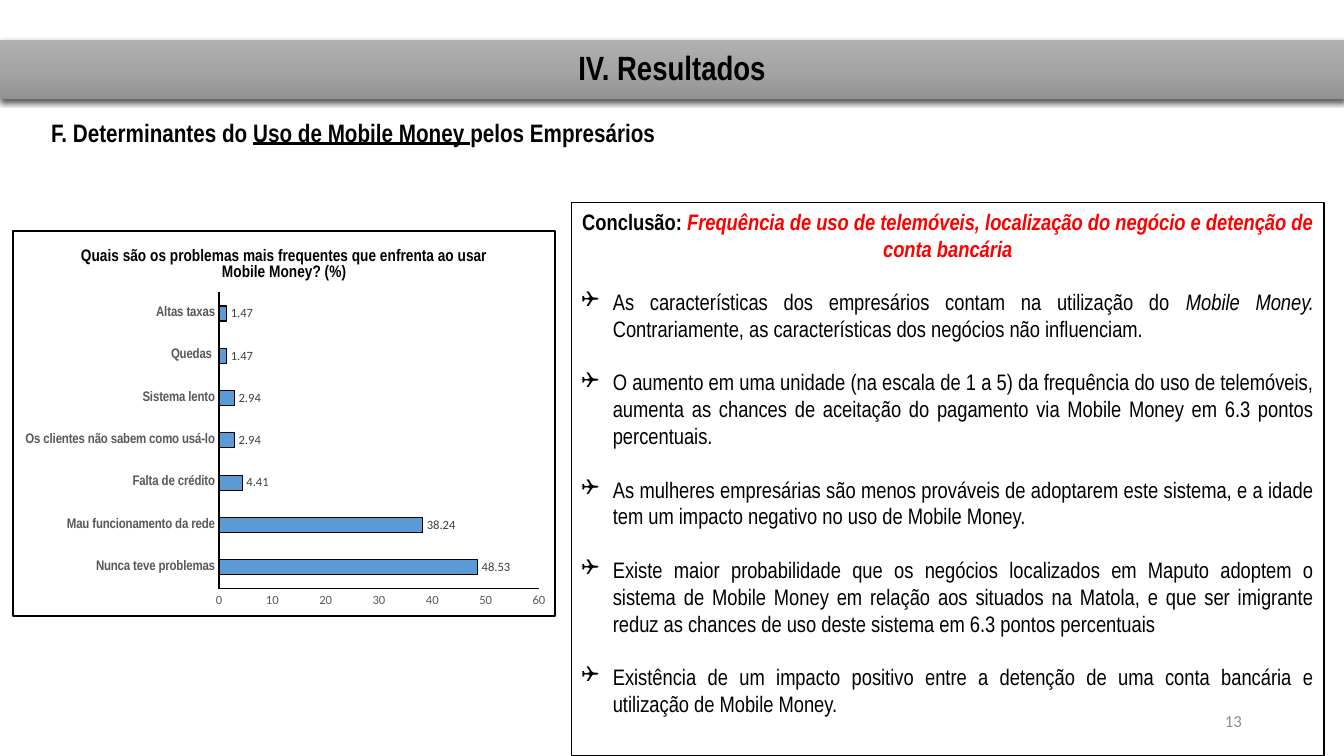
import copy

import pptx
import pptx.chart.data
import pptx.dml.color
import pptx.enum.chart
import pptx.enum.text
import pptx.oxml
import pptx.oxml.ns
import pptx.util
from pptx.util import Cm, Pt

RGB = pptx.dml.color.RGBColor
BLACK = RGB(0x00, 0x00, 0x00)
WHITE = RGB(0xFF, 0xFF, 0xFF)
RED = RGB(0xFF, 0x00, 0x00)
BLUE = RGB(0x5B, 0x9B, 0xD5)
LABEL_GREY = RGB(0x40, 0x40, 0x40)
AXIS_GREY = RGB(0x59, 0x59, 0x59)
NUMBER_GREY = RGB(0x8C, 0x8C, 0x8C)
BAND_GREYS = [RGB(0xAF, 0xAF, 0xAF), RGB(0xA5, 0xA5, 0xA5), RGB(0x93, 0x93, 0x93)]

NARROW = "Arial Narrow"
ALIGN = pptx.enum.text.PP_ALIGN
ANCHOR = pptx.enum.text.MSO_ANCHOR
BULLET_INDENT = Cm(0.79)

FINDINGS = [
    [("As características dos empresários contam na utilização do ", {}),
     ("Mobile Money. ", {"italic": True}),
     ("Contrariamente, as características dos negócios não influenciam.", {})],
    [("O aumento em uma unidade (na escala de 1 a 5) da frequência do uso de "
      "telemóveis, aumenta as chances de aceitação do pagamento via Mobile Money "
      "em 6.3 pontos percentuais.", {})],
    [("As mulheres empresárias são menos prováveis de adoptarem este sistema, e a "
      "idade tem um impacto negativo no uso de Mobile Money.", {})],
    [("Existe maior probabilidade que os negócios localizados em Maputo adoptem o "
      "sistema de Mobile Money em relação aos situados na Matola, e que ser "
      "imigrante reduz as chances de uso deste sistema em 6.3 pontos percentuais", {})],
    [("Existência de um impacto positivo entre a detenção de uma conta bancária e "
      "utilização de Mobile Money.", {})],
]
PROBLEMS = {
    "Nunca teve problemas": 48.53,
    "Mau funcionamento da rede": 38.24,
    "Falta de crédito": 4.41,
    "Os clientes não sabem como usá-lo": 2.94,
    "Sistema lento": 2.94,
    "Quedas ": 1.47,
    "Altas taxas": 1.47,
}


def xml(tag, inner, attrs=""):
    """Return an element of the a: or c: namespace."""
    ns = pptx.oxml.ns.nsdecls("a", "c")
    return pptx.oxml.parse_xml(f"<{tag} {ns} {attrs}>{inner}</{tag}>")


def format_font(font, size, color=BLACK, name=NARROW, bold=False, italic=False,
                underline=False):
    font.size, font.name = Pt(size), name
    font.bold, font.italic, font.underline = bold, italic, underline
    font.color.rgb = color


def add_text(p, text, **fmt):
    r = p.add_run()
    r.text = text
    format_font(r.font, **fmt)


def place(s, left, top, width, height):
    s.left, s.top, s.width, s.height = Cm(left), Cm(top), Cm(width), Cm(height)


def prepare_frame(s, align, anchor=ANCHOR.TOP):
    """Set up the text frame and return its first paragraph."""
    tf = s.text_frame
    tf.word_wrap = True
    tf.auto_size = pptx.enum.text.MSO_AUTO_SIZE.NONE
    tf.vertical_anchor = anchor
    p = tf.paragraphs[0]
    p.alignment = align
    p.space_before = Pt(0)
    return p


def set_bullet(p, char=None):
    pPr = p._p.get_or_add_pPr()
    indent = BULLET_INDENT if char else 0
    pPr.set("marL", str(indent))
    pPr.set("indent", str(-indent))
    if char:
        pPr.append(xml("a:buFont", "", 'typeface="Wingdings"'))
        pPr.append(xml("a:buChar", "", f'char="{char}"'))
    else:
        pPr.append(xml("a:buNone", ""))


def format_title(s):
    place(s, 0, 1.02, 33.87, 1.47)
    s.fill.gradient()
    s.fill.gradient_angle = 270
    stops = s.fill.gradient_stops
    first = stops[0]._gs
    first.addnext(copy.deepcopy(first))
    for stop, color, pos in zip(s.fill.gradient_stops, BAND_GREYS, (0, 0.5, 1)):
        stop.color.rgb = color
        stop.position = pos
    s._element.spPr.append(xml(
        "a:effectLst",
        f'<a:outerShdw blurRad="{Pt(4.5)}" dist="{Pt(1.5)}" dir="5400000" rotWithShape="0">'
        '<a:srgbClr val="000000"><a:alpha val="63000"/></a:srgbClr></a:outerShdw>'))
    p = prepare_frame(s, ALIGN.CENTER, ANCHOR.MIDDLE)
    p.line_spacing = 0.9
    add_text(p, "IV. Resultados", size=24, bold=True)


def format_conclusion(s):
    place(s, 14.4, 5.11, 18.97, 13.94)
    s.line.color.rgb = BLACK
    s.line.width = Pt(1)
    p = prepare_frame(s, ALIGN.CENTER)
    set_bullet(p)
    add_text(p, "Conclusão: ", size=16, bold=True)
    add_text(p, "Frequência de uso de telemóveis, localização do negócio e detenção "
             "de conta bancária", size=16, color=RED, bold=True, italic=True)
    for finding in FINDINGS:
        p = s.text_frame.add_paragraph()
        p.alignment = ALIGN.JUSTIFY
        p.space_before = Pt(19)
        set_bullet(p, "❑")
        for text, fmt in finding:
            add_text(p, text, size=16, **fmt)


def add_subtitle(slide):
    s = slide.shapes.add_textbox(Cm(1.04), Cm(2.82), Cm(30.5), Cm(1.02))
    p = prepare_frame(s, ALIGN.JUSTIFY)
    add_text(p, "F. Determinantes do ", size=18, bold=True)
    add_text(p, "Uso de Mobile Money ", size=18, bold=True, underline=True)
    add_text(p, "pelos Empresários", size=18, bold=True)


def add_page_number(slide):
    s = slide.shapes.add_textbox(Cm(23.93), Cm(17.65), Cm(7.62), Cm(1.02))
    p = prepare_frame(s, ALIGN.RIGHT, ANCHOR.MIDDLE)
    add_text(p, "13", size=12, color=NUMBER_GREY, name="Calibri")


def format_axis(axis, **fmt):
    axis.has_major_gridlines = False
    axis.major_tick_mark = axis.minor_tick_mark = pptx.enum.chart.XL_TICK_MARK.NONE
    axis.format.line.color.rgb = BLACK
    axis.format.line.width = Pt(0.75)
    format_font(axis.tick_labels.font, color=AXIS_GREY, **fmt)


def frame_chart(chart):
    """Give the chart its white ground, border and plot position."""
    chart._chartSpace.find(pptx.oxml.ns.qn("c:chart")).addnext(xml(
        "c:spPr",
        f'<a:solidFill><a:srgbClr val="{WHITE}"/></a:solidFill><a:ln w="{Pt(1.5)}">'
        f'<a:solidFill><a:srgbClr val="{BLACK}"/></a:solidFill></a:ln>'))
    area = chart._chartSpace.chart.plotArea
    for old in area.findall(pptx.oxml.ns.qn("c:layout")):
        area.remove(old)
    sizes = {"x": 0.38, "y": 0.16, "w": 0.59, "h": 0.77}
    inner = '<c:layoutTarget val="inner"/><c:xMode val="edge"/><c:yMode val="edge"/>'
    inner += "".join(f'<c:{k} val="{v}"/>' for k, v in sizes.items())
    area.insert(0, xml("c:layout", f"<c:manualLayout>{inner}</c:manualLayout>"))


def add_problem_chart(slide):
    data = pptx.chart.data.CategoryChartData()
    data.categories = list(PROBLEMS)
    data.add_series("Series 1", list(PROBLEMS.values()))
    chart = slide.shapes.add_chart(
        pptx.enum.chart.XL_CHART_TYPE.BAR_CLUSTERED,
        Cm(0.3), Cm(5.79), Cm(13.72), Cm(9.75), data).chart
    format_font(chart.font, size=10, name="Calibri")
    chart.has_legend = False
    chart.has_title = True
    add_text(chart.chart_title.text_frame.paragraphs[0],
             "Quais são os problemas mais frequentes que enfrenta ao usar "
             "Mobile Money? (%)", size=12, bold=True)
    chart.chart_title.include_in_layout = False
    format_axis(chart.category_axis, size=10, bold=True)
    format_axis(chart.value_axis, size=9, name="Calibri")
    chart.value_axis.minimum_scale = 0
    chart.value_axis.maximum_scale = 60
    chart.value_axis.major_unit = 10

    plot = chart.plots[0]
    plot.gap_width = 182
    plot.vary_by_categories = False
    bars = plot.series[0]
    bars.format.fill.solid()
    bars.format.fill.fore_color.rgb = BLUE
    bars.format.line.color.rgb = BLACK
    bars.format.line.width = Pt(0.75)
    labels = bars.data_labels
    labels.show_value = True
    labels.position = pptx.enum.chart.XL_LABEL_POSITION.OUTSIDE_END
    format_font(labels.font, size=9, color=LABEL_GREY, name="Calibri")
    frame_chart(chart)


def main():
    prs = pptx.Presentation()
    prs.slide_width, prs.slide_height = Cm(33.87), Cm(19.05)
    slide = prs.slides.add_slide(prs.slide_layouts[1])
    format_title(slide.shapes.title)
    add_subtitle(slide)
    format_conclusion(slide.placeholders[1])
    add_problem_chart(slide)
    add_page_number(slide)
    prs.save("out.pptx")


if __name__ == "__main__":
    main()
